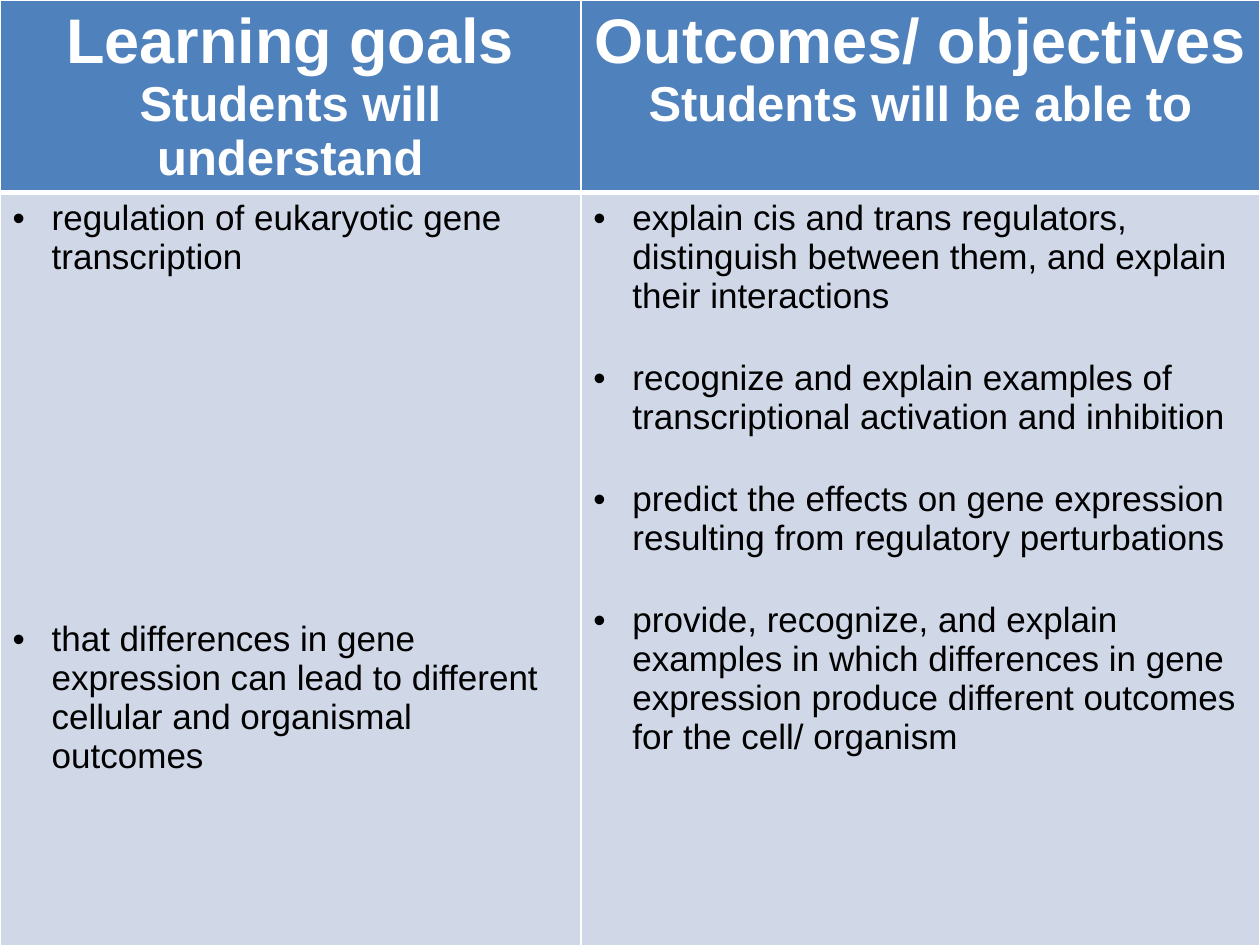
from lxml import etree
from pptx import Presentation
from pptx.dml.color import RGBColor
from pptx.enum.text import PP_ALIGN
from pptx.oxml.ns import qn
from pptx.util import Inches, Pt

CENTER, LEFT = PP_ALIGN.CENTER, PP_ALIGN.LEFT
BLANK_LAYOUT = 6
FONT = "Arial"
WHITE, BLACK, HEADER_BLUE, BODY_BLUE = "FFFFFF", "000000", "4F81BD", "D0D8E8"
COLUMN_WIDTHS = (4.61, 5.39)
ROW_HEIGHTS = (1.43, 6.49)
BULLET_INDENT = 0.31

COLUMNS = [
    {
        "heading": "Learning goals",
        "lead_in": "Students will understand",
        "points": [
            "regulation of eukaryotic gene transcription",
            "that differences in gene expression can lead to different "
            "cellular and organismal outcomes",
        ],
        "gap": 196,
    },
    {
        "heading": "Outcomes/ objectives",
        "lead_in": "Students will be able to",
        "points": [
            "explain cis and trans regulators, distinguish between them, "
            "and explain their interactions",
            "recognize and explain examples of transcriptional activation "
            "and inhibition",
            "predict the effects on gene expression resulting from "
            "regulatory perturbations",
            "provide, recognize, and explain examples in which differences "
            "in gene expression produce different outcomes for the cell/ "
            "organism",
        ],
        "gap": 24.5,
    },
]


def rgb(hex_colour):
    """Turn a hex string into a colour."""
    return RGBColor.from_string(hex_colour)


def add_bullet(paragraph):
    """Give a paragraph a hanging bullet."""
    properties = paragraph._p.get_or_add_pPr()
    properties.set("marL", str(Inches(BULLET_INDENT)))
    properties.set("indent", str(-Inches(BULLET_INDENT)))
    etree.SubElement(properties, qn("a:buFont"), typeface=FONT)
    etree.SubElement(properties, qn("a:buChar"), char="•")


def write(frame, text, size, colour, bold=False, align=LEFT, bullet=False,
          first=False, gap=0):
    """Write one formatted paragraph into a text frame."""
    paragraph = frame.paragraphs[0] if first else frame.add_paragraph()
    if bullet:
        add_bullet(paragraph)
    paragraph.alignment = align
    if gap and not first:
        paragraph.space_before = Pt(gap)
    run = paragraph.add_run()
    run.text = text
    run.font.name = FONT
    run.font.size = Pt(size)
    run.font.bold = bold
    run.font.color.rgb = rgb(colour)


def style_cell(cell, fill, bottom_width=1):
    """Fill a cell and draw its white borders."""
    cell.fill.solid()
    cell.fill.fore_color.rgb = rgb(fill)
    properties = cell._tc.get_or_add_tcPr()
    widths = {"lnL": 1, "lnR": 1, "lnT": 1, "lnB": bottom_width}
    for position, (side, width) in enumerate(widths.items()):
        border = etree.Element(qn(f"a:{side}"), w=str(Pt(width)))
        line_fill = etree.SubElement(border, qn("a:solidFill"))
        etree.SubElement(line_fill, qn("a:srgbClr"), val=WHITE)
        properties.insert(position, border)


def fill_header(cell, column):
    """Write a column's heading and lead-in."""
    style_cell(cell, HEADER_BLUE, bottom_width=3)
    heading_format = {"colour": WHITE, "bold": True, "align": CENTER}
    write(cell.text_frame, column["heading"], 36, first=True, **heading_format)
    write(cell.text_frame, column["lead_in"], 28, **heading_format)


def fill_points(cell, column):
    """Write a column's bulleted points."""
    style_cell(cell, BODY_BLUE)
    for index, point in enumerate(column["points"]):
        write(cell.text_frame, point, 20, BLACK, bullet=True,
              first=index == 0, gap=column["gap"])


def add_goals_table(slide, left, top, width, height):
    """Place the table of goals and outcomes in the given box."""
    table = slide.shapes.add_table(
        2, len(COLUMNS), Inches(left), Inches(top), Inches(width), Inches(height)
    ).table
    for row, share in zip(table.rows, ROW_HEIGHTS):
        row.height = Inches(height * share / sum(ROW_HEIGHTS))
    for index, column in enumerate(COLUMNS):
        share = COLUMN_WIDTHS[index] / sum(COLUMN_WIDTHS)
        table.columns[index].width = Inches(width * share)
        fill_header(table.cell(0, index), column)
        fill_points(table.cell(1, index), column)


def main():
    """Build and save the slide."""
    presentation = Presentation()
    presentation.slide_width = Inches(10)
    presentation.slide_height = Inches(7.5)
    slide = presentation.slides.add_slide(presentation.slide_layouts[BLANK_LAYOUT])
    add_goals_table(slide, 0, 0, sum(COLUMN_WIDTHS), sum(ROW_HEIGHTS))
    presentation.save("out.pptx")


if __name__ == "__main__":
    main()
